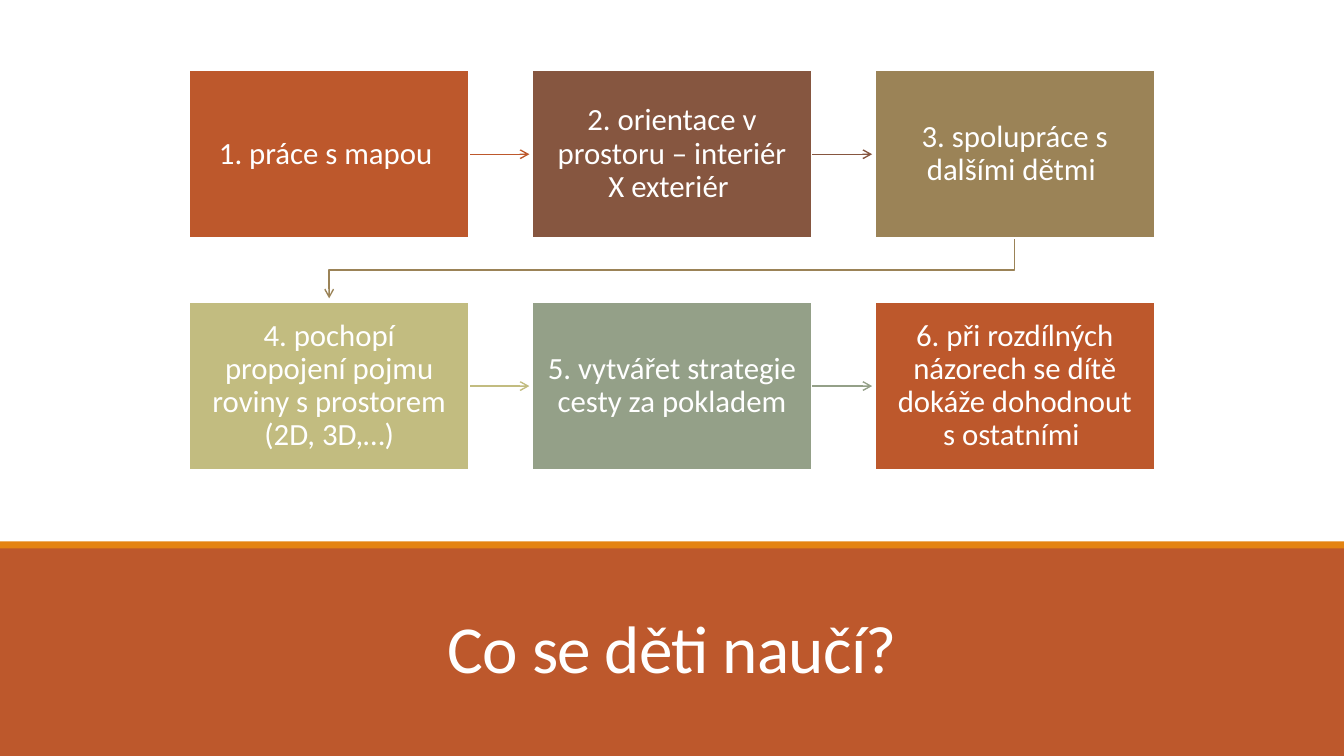
from dataclasses import dataclass

from lxml.etree import SubElement
from pptx import Presentation
from pptx.dml.color import RGBColor
from pptx.enum.shapes import MSO_CONNECTOR, MSO_SHAPE
from pptx.enum.text import MSO_ANCHOR, MSO_AUTO_SIZE, PP_ALIGN
from pptx.oxml.ns import qn
from pptx.util import Inches, Pt


@dataclass(frozen=True)
class Theme:
    font: str = "Calibri"
    title_size: int = 48
    step_size: int = 22
    white: str = "FFFFFF"
    rust: str = "BD582C"
    orange: str = "E48312"
    brown: str = "865640"
    khaki: str = "9B8357"
    olive: str = "C2BC80"
    sage: str = "94A088"


@dataclass(frozen=True)
class Step:
    text: str
    color: str


THEME = Theme()
SLIDE_WIDTH, SLIDE_HEIGHT = 13.33, 7.5
COLUMNS = 3
GRID_LEFT, GRID_TOP = 1.88, 0.7
STEP_WIDTH, STEP_HEIGHT = 2.77, 1.66
COLUMN_PITCH, ROW_PITCH = 3.4, 2.3
ARROW_LENGTH = 0.6

STEPS = [
    Step("1. práce s mapou ", THEME.rust),
    Step("2. orientace v prostoru – interiér X exteriér ", THEME.brown),
    Step("3. spolupráce s dalšími dětmi ", THEME.khaki),
    Step("4. pochopí propojení pojmu roviny s prostorem (2D, 3D,…)", THEME.olive),
    Step("5. vytvářet strategie cesty za pokladem", THEME.sage),
    Step("6. při rozdílných názorech se dítě dokáže dohodnout s ostatními ", THEME.rust),
]


def rgb(color: str) -> RGBColor:
    return RGBColor.from_string(color)


def step_corner(index: int) -> tuple[float, float]:
    row, column = divmod(index, COLUMNS)
    return GRID_LEFT + column * COLUMN_PITCH, GRID_TOP + row * ROW_PITCH


def add_rectangle(page, left: float, top: float, width: float, height: float, color: str):
    box = page.shapes.add_shape(
        MSO_SHAPE.RECTANGLE, Inches(left), Inches(top), Inches(width), Inches(height)
    )
    box.shadow.inherit = False
    box.fill.solid()
    box.fill.fore_color.rgb = rgb(color)
    box.line.fill.background()
    return box


def format_paragraph(para, size: int, line_spacing: float) -> None:
    para.alignment = PP_ALIGN.CENTER
    para.line_spacing = line_spacing
    para.font.name = THEME.font
    para.font.size = Pt(size)
    para.font.color.rgb = rgb(THEME.white)


def add_step(page, index: int, step: Step) -> None:
    box = add_rectangle(page, *step_corner(index), STEP_WIDTH, STEP_HEIGHT, step.color)
    box.line.color.rgb = rgb(THEME.white)
    box.line.width = Pt(1.25)
    frame = box.text_frame
    frame.word_wrap = True
    frame.vertical_anchor = MSO_ANCHOR.MIDDLE
    frame.margin_left = frame.margin_right = Inches(0.14)
    frame.margin_top = frame.margin_bottom = Inches(0.14)
    frame.text = step.text
    format_paragraph(frame.paragraphs[0], THEME.step_size, 0.9)


def style_arrow(arrow, color: str) -> None:
    arrow.line.color.rgb = rgb(color)
    arrow.line.width = Pt(1)
    SubElement(arrow.line._get_or_add_ln(), qn("a:tailEnd"), type="arrow")


def add_row_arrow(page, index: int, color: str) -> None:
    """Point from a step to its right-hand neighbour."""
    left, top = step_corner(index)
    start, middle = left + STEP_WIDTH, top + STEP_HEIGHT / 2
    arrow = page.shapes.add_connector(
        MSO_CONNECTOR.STRAIGHT,
        Inches(start), Inches(middle), Inches(start + ARROW_LENGTH), Inches(middle),
    )
    style_arrow(arrow, color)
    SubElement(arrow._element.spPr, qn("a:effectLst"))


def add_return_arrow(page, index: int, color: str) -> None:
    """Lead from the end of one row down to the start of the next."""
    left, top = step_corner(index)
    start_x, start_y = left + STEP_WIDTH / 2, top + STEP_HEIGHT
    end_x, bend_y = GRID_LEFT + STEP_WIDTH / 2, start_y + 0.32
    corners = [(start_x, bend_y), (end_x, bend_y), (end_x, start_y + ARROW_LENGTH)]
    builder = page.shapes.build_freeform(Inches(start_x), Inches(start_y))
    builder.add_line_segments([(Inches(x), Inches(y)) for x, y in corners], close=False)
    arrow = builder.convert_to_shape()
    arrow.fill.background()
    style_arrow(arrow, color)
    arrow.shadow.inherit = False


def place_title(page, text: str) -> None:
    title = page.shapes.title
    title.left, title.top = Inches(1.17), Inches(5.74)
    title.width, title.height = Inches(11), Inches(1.13)
    frame = title.text_frame
    frame.text = text
    frame.word_wrap = True
    frame.auto_size = MSO_AUTO_SIZE.NONE
    frame.vertical_anchor = MSO_ANCHOR.BOTTOM
    para = frame.paragraphs[0]
    format_paragraph(para, THEME.title_size, 0.85)
    para.runs[0].font._element.set("spc", "-50")
    # Bring the title in front of the band.
    title._element.getparent().append(title._element)


def main() -> None:
    deck = Presentation()
    deck.slide_width, deck.slide_height = Inches(SLIDE_WIDTH), Inches(SLIDE_HEIGHT)
    page = deck.slides.add_slide(deck.slide_layouts.get_by_name("Title Only"))
    page.background.fill.solid()
    page.background.fill.fore_color.rgb = rgb(THEME.white)

    add_rectangle(page, 0, 5.42, SLIDE_WIDTH, 2.08, THEME.rust)
    place_title(page, "Co se děti naučí?")
    add_rectangle(page, 0, 5.37, SLIDE_WIDTH, 0.07, THEME.orange)

    for index, step in enumerate(STEPS):
        if (index + 1) % COLUMNS:
            add_row_arrow(page, index, step.color)
        elif index + 1 < len(STEPS):
            add_return_arrow(page, index, step.color)
        add_step(page, index, step)

    deck.save("out.pptx")


if __name__ == "__main__":
    main()
